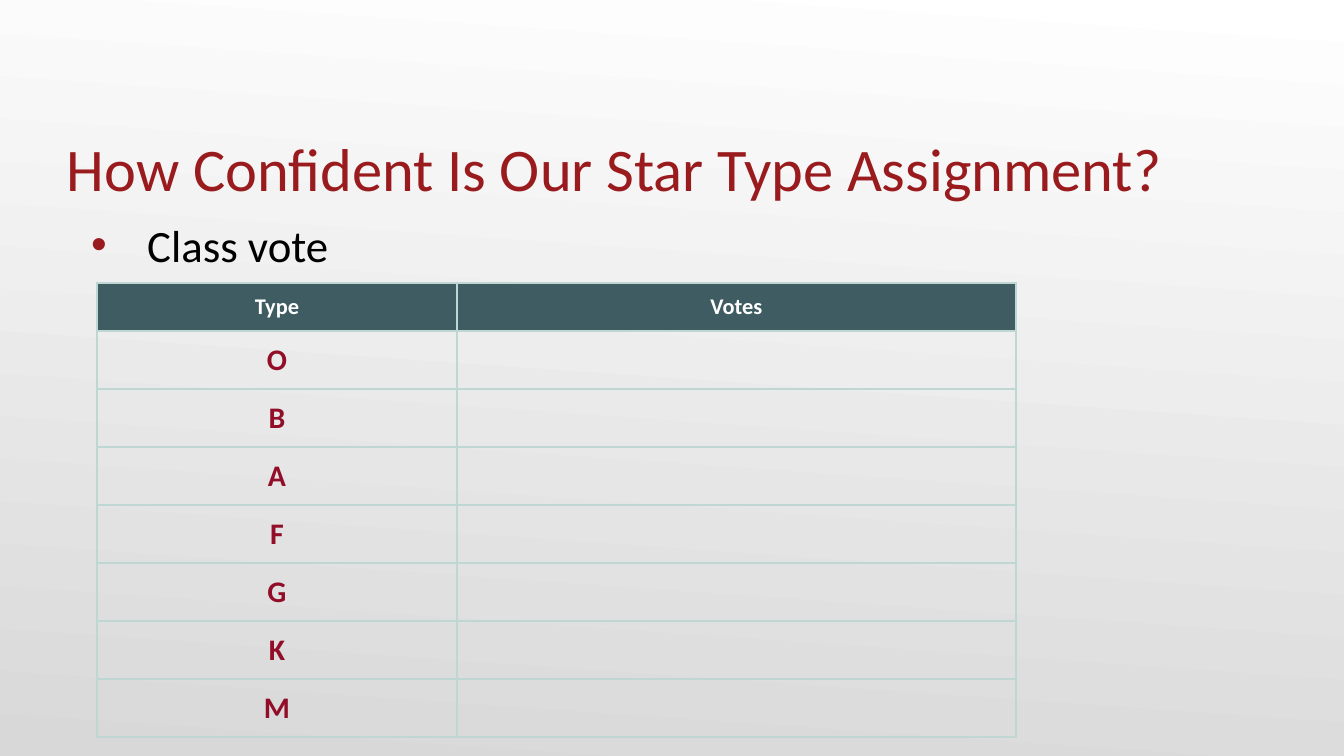
from dataclasses import dataclass

from lxml.etree import SubElement
from pptx import Presentation
from pptx.dml.color import RGBColor
from pptx.enum.text import MSO_ANCHOR, PP_ALIGN
from pptx.oxml.ns import qn
from pptx.util import Emu, Pt

TITLE = "How Confident Is Our Star Type Assignment?"
BULLET = "Class vote"
HEADINGS = ("Type", "Votes")
STAR_TYPES = ("O", "B", "A", "F", "G", "K", "M")

SLIDE_SIZE = (1344, 756)
TITLE_BOX = (67, 78, 1210, 126)
BODY_BOX = (67, 211, 594, 489)
TABLE_ORIGIN = (97, 283)
COLUMN_WIDTHS = (360, 559)
HEADER_HEIGHT, ROW_HEIGHT = 48, 58
CELL_MARGIN = 10
BULLET_INDENT, BULLET_HANG = 67, 56


@dataclass(frozen=True)
class Theme:
    font: str = "Calibri"
    title: str = "991B1E"
    body: str = "000000"
    header_text: str = "FFFFFF"
    header_fill: str = "3E5C61"
    star_type: str = "910D28"
    border: str = "BED7D3"
    background: tuple = ("FFFFFF", "D8D8D8")
    title_size: float = 32.4
    body_size: float = 24
    header_size: float = 12
    star_type_size: float = 16


THEME = Theme()


def px(length):
    return Emu(round(length * 914400 / 134.4))


def format_runs(paragraph, size, color, bold=False):
    for run in paragraph.runs:
        run.font.name = THEME.font
        run.font.size = Pt(size)
        run.font.bold = bold
        run.font.color.rgb = RGBColor.from_string(color)


def add_text(slide, box, text, size, color):
    frame = slide.shapes.add_textbox(*map(px, box)).text_frame
    frame.word_wrap = True
    frame.text = text
    format_runs(frame.paragraphs[0], size, color)
    return frame


def add_bullet(paragraph):
    properties = paragraph._p.get_or_add_pPr()
    properties.set("marL", str(px(BULLET_INDENT)))
    properties.set("indent", str(-px(BULLET_HANG)))
    color = SubElement(properties, qn("a:buClr"))
    SubElement(color, qn("a:srgbClr"), val=THEME.title)
    SubElement(properties, qn("a:buFont"), typeface="Arial")
    SubElement(properties, qn("a:buChar"), char="•")


def add_borders(cell):
    properties = cell._tc.get_or_add_tcPr()
    for side in ("lnL", "lnR", "lnT", "lnB"):
        line = SubElement(properties, qn(f"a:{side}"), w=str(Pt(1)))
        fill = SubElement(line, qn("a:solidFill"))
        SubElement(fill, qn("a:srgbClr"), val=THEME.border)


def fill_cell(cell, text, size, color):
    cell.margin_left = cell.margin_right = px(CELL_MARGIN)
    cell.margin_top = cell.margin_bottom = px(CELL_MARGIN)
    cell.vertical_anchor = MSO_ANCHOR.MIDDLE
    cell.text = text
    paragraph = cell.text_frame.paragraphs[0]
    paragraph.alignment = PP_ALIGN.CENTER
    format_runs(paragraph, size, color, bold=True)


def add_vote_table(slide):
    heights = [HEADER_HEIGHT] + [ROW_HEIGHT] * len(STAR_TYPES)
    size = (sum(COLUMN_WIDTHS), sum(heights))
    table = slide.shapes.add_table(
        len(heights), len(HEADINGS), *map(px, TABLE_ORIGIN + size)
    ).table
    table.horz_banding = False
    for column, width in zip(table.columns, COLUMN_WIDTHS):
        column.width = px(width)
    for row, height in zip(table.rows, heights):
        row.height = px(height)
    for cell in table.iter_cells():
        add_borders(cell)
        cell.fill.background()
    for column, heading in enumerate(HEADINGS):
        cell = table.cell(0, column)
        fill_cell(cell, heading, THEME.header_size, THEME.header_text)
        cell.fill.solid()
        cell.fill.fore_color.rgb = RGBColor.from_string(THEME.header_fill)
    for row, star_type in enumerate(STAR_TYPES, start=1):
        fill_cell(table.cell(row, 0), star_type,
                  THEME.star_type_size, THEME.star_type)


def main():
    presentation = Presentation()
    presentation.slide_width, presentation.slide_height = map(px, SLIDE_SIZE)
    slide = presentation.slides.add_slide(presentation.slide_layouts[6])

    backdrop = slide.background.fill
    backdrop.gradient()
    backdrop.gradient_angle = 266
    for stop, color in zip(backdrop.gradient_stops, THEME.background):
        stop.color.rgb = RGBColor.from_string(color)

    title = add_text(slide, TITLE_BOX, TITLE, THEME.title_size, THEME.title)
    title.vertical_anchor = MSO_ANCHOR.BOTTOM
    title.margin_left = title.margin_right = title.margin_bottom = 0

    body = add_text(slide, BODY_BOX, BULLET, THEME.body_size, THEME.body)
    add_bullet(body.paragraphs[0])

    add_vote_table(slide)
    presentation.save("out.pptx")


if __name__ == "__main__":
    main()
